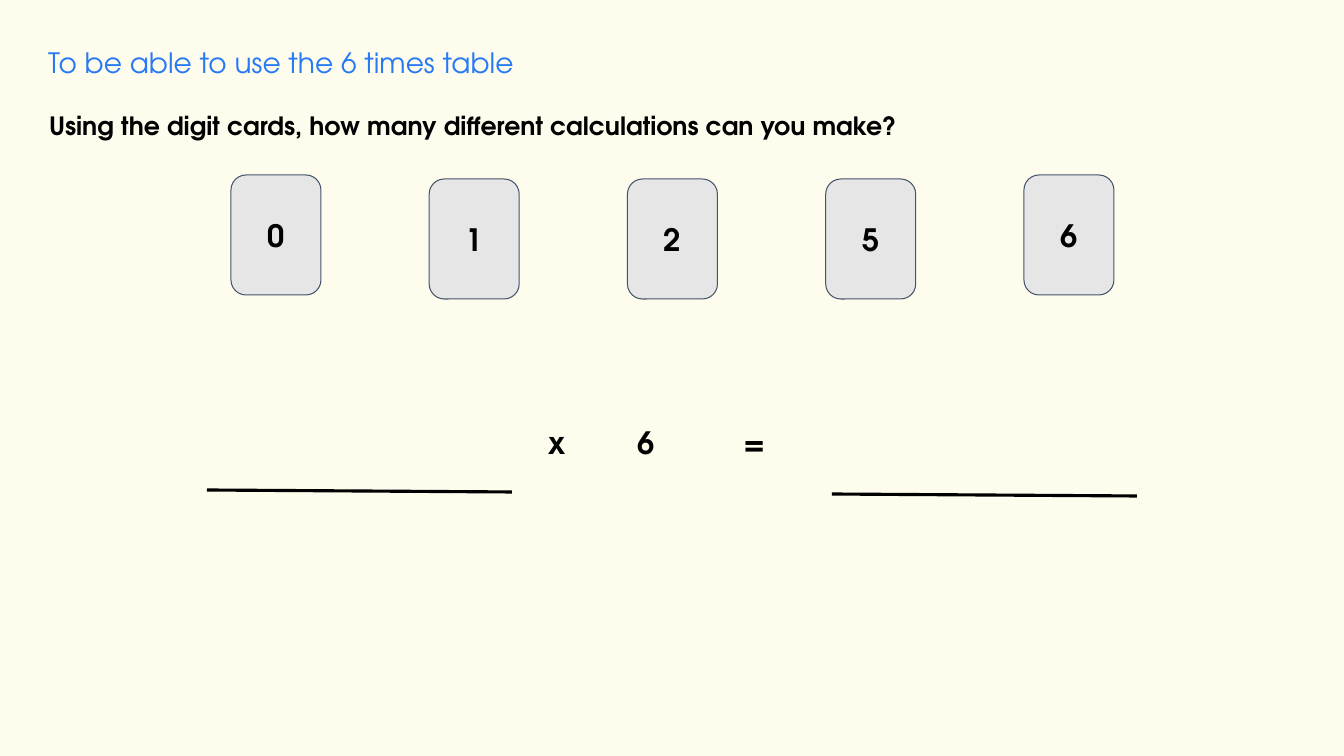
from lxml.etree import SubElement
from pptx import Presentation
from pptx.dml.color import RGBColor
from pptx.enum.shapes import MSO_CONNECTOR as Connector, MSO_SHAPE as Shape
from pptx.enum.text import MSO_ANCHOR as Anchor, MSO_AUTO_SIZE as AutoSize, PP_ALIGN as Align
from pptx.oxml.ns import qn
from pptx.util import Pt

SLIDE_WIDTH, SLIDE_HEIGHT = 1344, 756
SCALE = 12192000 / SLIDE_WIDTH
FONT = "TeX Gyre Adventor"
COLOURS = {
    "page": "FEFCED",
    "title": "2779F5",
    "ink": "000000",
    "card": "E7E6E6",
    "edge": "44546A",
}
CARD_WIDTH, CARD_HEIGHT = 90, 120


def px(length):
    return round(length * SCALE)


def colour(name):
    return RGBColor.from_string(COLOURS[name])


def set_values(target, values):
    for name, value in values.items():
        setattr(target, name, value)


def write(shape, text, size, ink, bold, align, anchor, inset, spacing=1.0):
    frame = shape.text_frame
    side, end = map(px, inset)
    set_values(frame, {
        "word_wrap": True, "auto_size": AutoSize.NONE, "vertical_anchor": anchor,
        "margin_left": side, "margin_right": side,
        "margin_top": end, "margin_bottom": end,
    })
    para = frame.paragraphs[0]
    set_values(para, {"alignment": align, "line_spacing": spacing, "space_before": Pt(0)})
    span = para.add_run()
    span.text = text
    set_values(span.font, {"name": FONT, "size": Pt(size), "bold": bold})
    span.font.color.rgb = colour(ink)
    return para


def add_heading(holder, box, text, size, ink, bold, spacing=1.0):
    set_values(holder, dict(zip(("left", "top", "width", "height"), map(px, box))))
    para = write(holder, text, size, ink, bold, Align.LEFT, Anchor.TOP, (10, 5), spacing)
    properties = para._p.get_or_add_pPr()
    set_values_xml = {"marL": "0", "indent": "0"}
    for name, value in set_values_xml.items():
        properties.set(name, value)
    SubElement(properties, qn("a:buNone"))


def add_card(page, left, top, text, filled):
    card = page.shapes.add_shape(
        Shape.ROUNDED_RECTANGLE, *map(px, (left, top, CARD_WIDTH, CARD_HEIGHT)))
    card.shadow.inherit = False
    if filled:
        card.fill.solid()
        card.fill.fore_color.rgb = colour("card")
        card.line.color.rgb = colour("edge")
        card.line.width = Pt(0.75)
    else:
        card.fill.background()
        card.line.fill.background()
    write(card, text, 22, "ink", True, Align.CENTER, Anchor.MIDDLE, (10, 10))


def add_digit_cards(page, box, digits):
    left, top, width, height = box
    step = (width - CARD_WIDTH) / (len(digits) - 1)
    for index, digit in enumerate(digits):
        is_end = index in (0, len(digits) - 1)
        drop = 0 if is_end else height - CARD_HEIGHT
        add_card(page, left + index * step, top + drop, digit, True)


def add_answer_line(page, left, top, width):
    line = page.shapes.add_connector(
        Connector.STRAIGHT, *map(px, (left, top, left + width, top + 2)))
    line.line.color.rgb = colour("ink")
    line.line.width = Pt(2.25)
    SubElement(line._element.spPr, qn("a:effectLst"))


def add_calculation(page, box):
    left, top, width, height = box
    line_width = 305
    for offset, text in ((305, "x"), (394, "6"), (503, "=")):
        add_card(page, left + offset, top, text, False)
    add_answer_line(page, left, top + height - 6, line_width)
    add_answer_line(page, left + width - line_width, top + height - 2, line_width)


def build_page(deck):
    page = deck.slides.add_slide(deck.slide_layouts[1])
    page.background.fill.solid()
    page.background.fill.fore_color.rgb = colour("page")
    title, body = page.placeholders
    add_heading(title, (38, 40, 1212, 44),
                "To be able to use the 6 times table", 20, "title", False)
    add_heading(body, (39, 90, 1272, 42),
                "Using the digit cards, how many different calculations can you make?",
                18, "ink", True, 1.5)
    add_digit_cards(page, (231, 175, 883, 124), "01256")
    add_calculation(page, (207, 382, 930, 114))


def main():
    deck = Presentation()
    deck.slide_width, deck.slide_height = px(SLIDE_WIDTH), px(SLIDE_HEIGHT)
    build_page(deck)
    deck.save("out.pptx")


if __name__ == "__main__":
    main()
